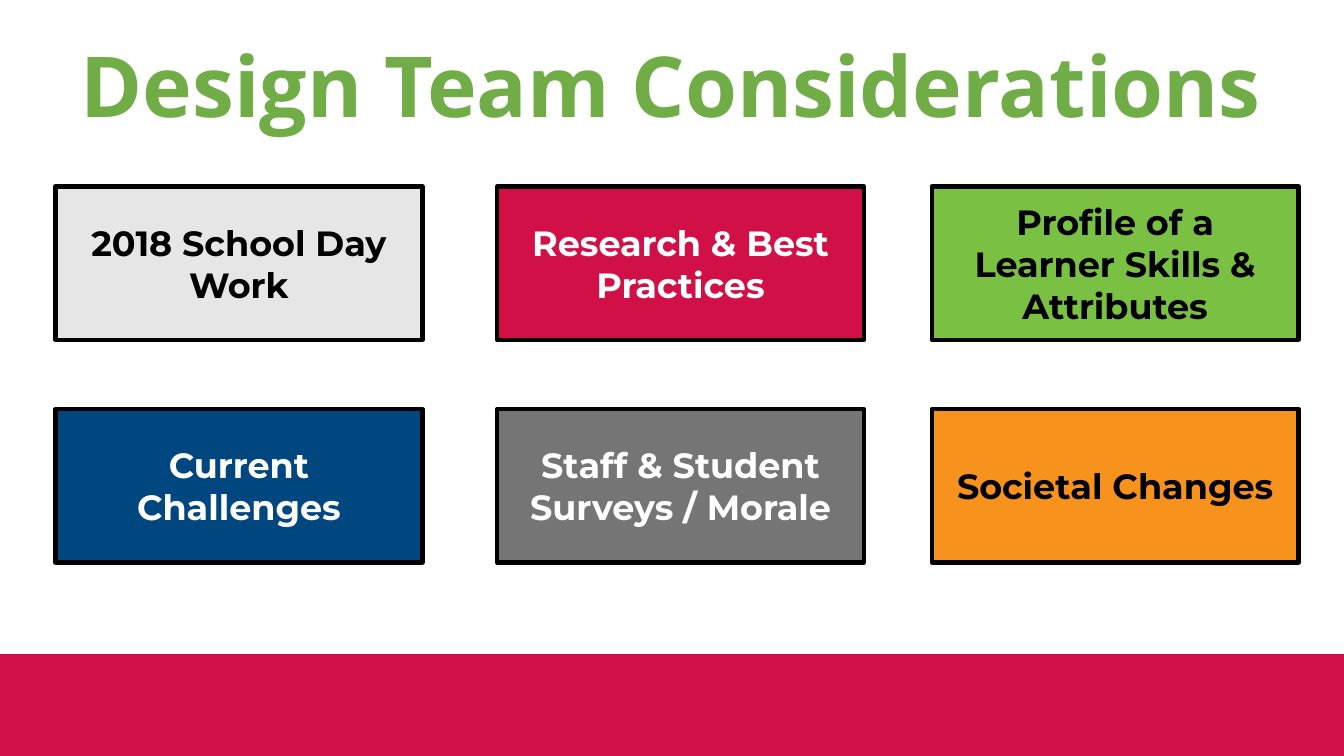
from pptx import Presentation
from pptx.dml.color import RGBColor
from pptx.enum.shapes import MSO_SHAPE as Preset
from pptx.enum.text import MSO_ANCHOR as Anchor, PP_ALIGN as Align
from pptx.util import Inches, Pt

BLACK = RGBColor(0x00, 0x00, 0x00)
WHITE = RGBColor(0xFF, 0xFF, 0xFF)
CRIMSON = RGBColor(0xD1, 0x10, 0x48)
TITLE_GREEN = RGBColor(0x70, 0xAD, 0x47)
LIGHT_GRAY = RGBColor(0xE7, 0xE6, 0xE6)
LIME = RGBColor(0x79, 0xC0, 0x43)
NAVY = RGBColor(0x00, 0x47, 0x80)
GRAY = RGBColor(0x75, 0x75, 0x75)
ORANGE = RGBColor(0xF7, 0x93, 0x1D)

COLUMN_LEFTS = (0.55, 4.93, 9.24)
ROW_TOPS = (1.85, 4.06)
CARD_WIDTH, CARD_HEIGHT = 3.64, 1.52

CARD_ROWS = (
    (("2018 School Day Work", LIGHT_GRAY, BLACK),
     ("Research & Best Practices", CRIMSON, WHITE),
     ("Profile of a Learner Skills & Attributes", LIME, BLACK)),
    (("Current Challenges", NAVY, WHITE),
     ("Staff & Student Surveys / Morale", GRAY, WHITE),
     ("Societal Changes", ORANGE, BLACK)),
)


def write_text(box, text, *, font, size, color, anchor, inset, spacing=1.0):
    """Fill a box with one bold, centred paragraph."""
    frame = box.text_frame
    frame.word_wrap = True
    frame.vertical_anchor = anchor
    frame.margin_left = frame.margin_right = Inches(0.1)
    frame.margin_top = frame.margin_bottom = Inches(inset)
    para = frame.paragraphs[0]
    para.alignment = Align.CENTER
    para.line_spacing = spacing
    span = para.add_run()
    span.text = text
    span.font.name = font
    span.font.size = Pt(size)
    span.font.bold = True
    span.font.color.rgb = color


class SlideBuilder:
    title_font = "Open Sans"
    card_font = "Montserrat"

    def __init__(self, page):
        self.page = page

    def rectangle(self, left, top, width, height, fill):
        box = self.page.shapes.add_shape(
            Preset.RECTANGLE, Inches(left), Inches(top), Inches(width), Inches(height))
        box.shadow.inherit = False
        box.fill.solid()
        box.fill.fore_color.rgb = fill
        box.line.fill.background()
        return box

    def title(self, text):
        box = self.page.shapes.add_textbox(
            Inches(0.55), Inches(0.4), Inches(12.21), Inches(1.45))
        write_text(box, text, font=self.title_font, size=60, color=TITLE_GREEN,
                   anchor=Anchor.TOP, inset=0.05, spacing=0.9)

    def card(self, left, top, text, fill, color):
        box = self.rectangle(left, top, CARD_WIDTH, CARD_HEIGHT, fill)
        box.line.color.rgb = BLACK
        box.line.width = Pt(3)
        write_text(box, text, font=self.card_font, size=25, color=color,
                   anchor=Anchor.MIDDLE, inset=0.1)


def main():
    deck = Presentation()
    deck.slide_width = Inches(13.33)
    deck.slide_height = Inches(7.5)
    builder = SlideBuilder(deck.slides.add_slide(deck.slide_layouts[6]))

    # Footer band and title
    builder.rectangle(0, 6.49, 13.33, 1.01, CRIMSON)
    builder.title("Design Team Considerations")

    # Grid of considerations
    for top, cards in zip(ROW_TOPS, CARD_ROWS):
        for left, (text, fill, color) in zip(COLUMN_LEFTS, cards):
            builder.card(left, top, text, fill, color)

    deck.save("out.pptx")


if __name__ == "__main__":
    main()
